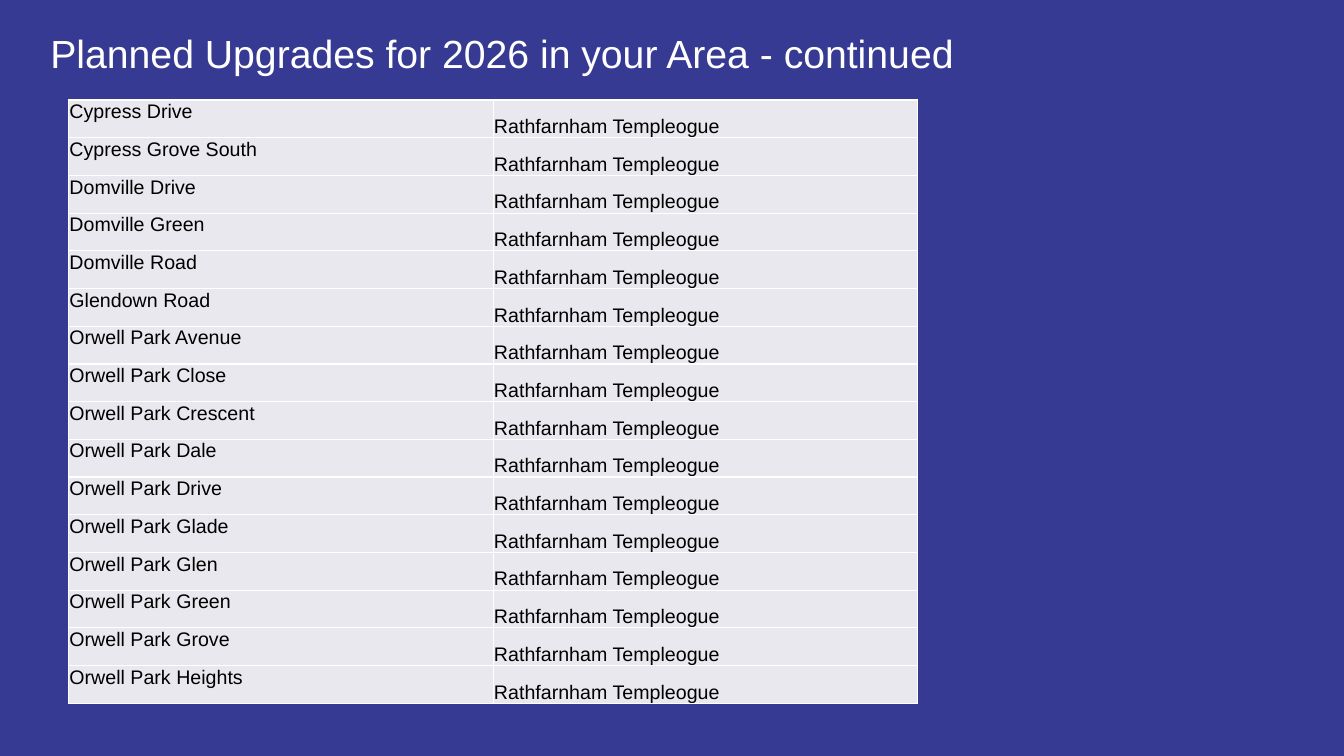
from lxml.etree import SubElement
from pptx import Presentation
from pptx.dml.color import RGBColor
from pptx.enum.text import MSO_ANCHOR, PP_ALIGN
from pptx.oxml.ns import qn
from pptx.util import Cm, Pt

COLORS = {"background": "363A92", "title": "FFFFFF", "text": "000000",
          "cell": "E8E8EE", "border": "FFFFFF"}
FONT = "Arial"
AREA = "Rathfarnham Templeogue"
ROADS = [
    "Cypress Drive", "Cypress Grove South",
    "Domville Drive", "Domville Green", "Domville Road",
    "Glendown Road",
    *(f"Orwell Park {name}" for name in (
        "Avenue", "Close", "Crescent", "Dale", "Drive",
        "Glade", "Glen", "Green", "Grove", "Heights")),
]


def color(name):
    """Return the named colour."""
    return RGBColor.from_string(COLORS[name])


def add_run(p, text, size, color_name):
    """Add a formatted run to a left-aligned paragraph."""
    p.alignment = PP_ALIGN.LEFT
    r = p.add_run()
    r.text = text
    r.font.name = FONT
    r.font.size = Pt(size)
    r.font.color.rgb = color(color_name)


def set_title(s, text):
    """Place and fill the title placeholder."""
    sp = s.shapes.title
    sp.left, sp.top, sp.width, sp.height = Cm(1.27), Cm(0.74), Cm(31.34), Cm(1.8)
    tf = sp.text_frame
    tf.word_wrap = True
    tf.vertical_anchor = MSO_ANCHOR.TOP
    tf.margin_left = tf.margin_right = tf.margin_top = tf.margin_bottom = 0
    add_run(tf.paragraphs[0], text, 28, "title")


def set_borders(cell):
    """Draw a thin line on all four sides of a cell."""
    tc_pr = cell._tc.get_or_add_tcPr()
    for side in ("lnL", "lnR", "lnT", "lnB"):
        ln = SubElement(tc_pr, qn(f"a:{side}"), w=str(Pt(1)))
        fill = SubElement(ln, qn("a:solidFill"))
        SubElement(fill, qn("a:srgbClr"), val=COLORS["border"])


def fill_cell(cell, text, anchor):
    """Format a cell and write its text."""
    set_borders(cell)
    cell.fill.solid()
    cell.fill.fore_color.rgb = color("cell")
    cell.margin_left = cell.margin_right = cell.margin_top = Cm(0.02)
    cell.margin_bottom = 0
    cell.vertical_anchor = anchor
    add_run(cell.text_frame.paragraphs[0], text, 14, "text")


def add_roads_table(s):
    """Add the table of roads and their area."""
    row_height, col_width = Cm(0.95), Cm(10.7)
    table = s.shapes.add_table(len(ROADS), 2, Cm(1.73), Cm(2.52),
                               2 * col_width, len(ROADS) * row_height).table
    table.first_row = table.horz_banding = False
    for col in table.columns:
        col.width = col_width
    for i, road in enumerate(ROADS):
        table.rows[i].height = row_height
        fill_cell(table.cell(i, 0), road, MSO_ANCHOR.TOP)
        fill_cell(table.cell(i, 1), AREA, MSO_ANCHOR.BOTTOM)


def main():
    """Build and save the slide."""
    prs = Presentation()
    prs.slide_width, prs.slide_height = Cm(33.87), Cm(19.05)
    s = prs.slides.add_slide(prs.slide_layouts[5])
    s.background.fill.solid()
    s.background.fill.fore_color.rgb = color("background")
    set_title(s, "Planned Upgrades for 2026 in your Area - continued")
    add_roads_table(s)
    prs.save("out.pptx")


if __name__ == "__main__":
    main()
